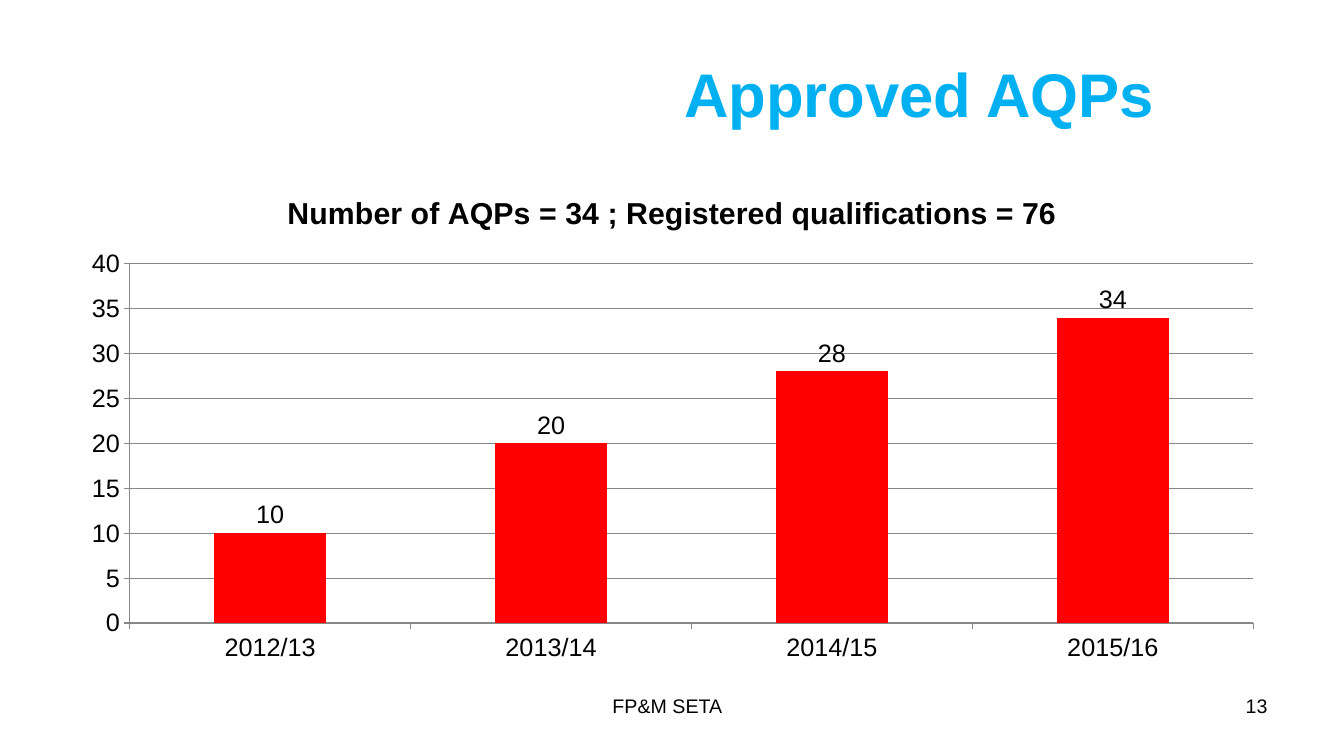
from pptx import Presentation
from pptx.chart.data import CategoryChartData
from pptx.dml.color import RGBColor
from pptx.enum.chart import XL_CHART_TYPE, XL_LABEL_POSITION, XL_TICK_MARK
from pptx.enum.text import MSO_ANCHOR, PP_ALIGN
from pptx.util import Inches, Pt

FONT = "Arial"
BLACK = "000000"
GRID_GREY = "878787"


def rgb(color):
    """Turn a hex string into a colour."""
    return RGBColor.from_string(color)


def set_font(font, size, color=BLACK, bold=False):
    """Apply the slide's typeface with a size, colour and weight."""
    font.name = FONT
    font.size = Pt(size)
    font.bold = bold
    font.color.rgb = rgb(color)


def add_text(slide, text, box, align, size, color=BLACK, bold=False, anchor=MSO_ANCHOR.TOP):
    """Add a one-paragraph text box."""
    shape = slide.shapes.add_textbox(*map(Inches, box))
    frame = shape.text_frame
    frame.word_wrap = True
    frame.vertical_anchor = anchor
    paragraph = frame.paragraphs[0]
    paragraph.text = text
    paragraph.alignment = align
    set_font(paragraph.font, size, color, bold)


def style_axis(axis):
    """Give an axis a thin grey line with outward ticks."""
    axis.major_tick_mark = XL_TICK_MARK.OUTSIDE
    axis.minor_tick_mark = XL_TICK_MARK.NONE
    axis.format.line.color.rgb = rgb(GRID_GREY)
    axis.format.line.width = Pt(0.75)
    set_font(axis.tick_labels.font, 18)


def add_column_chart(slide, title, categories, values, box, color):
    """Add a titled column chart with value labels above the columns."""
    data = CategoryChartData()
    data.categories = categories
    data.add_series("Series 1", values)
    chart = slide.shapes.add_chart(
        XL_CHART_TYPE.COLUMN_CLUSTERED, *map(Inches, box), data
    ).chart
    set_font(chart.font, 18)
    chart.has_legend = False
    chart.has_title = True
    title_paragraph = chart.chart_title.text_frame.paragraphs[0]
    title_paragraph.text = title
    set_font(title_paragraph.font, 21.6, bold=True)
    chart.chart_title.include_in_layout = False

    style_axis(chart.category_axis)
    value_axis = chart.value_axis
    style_axis(value_axis)
    value_axis.minimum_scale = 0
    value_axis.maximum_scale = 40
    value_axis.major_unit = 5
    value_axis.has_major_gridlines = True
    gridline = value_axis.major_gridlines.format.line
    gridline.color.rgb = rgb(GRID_GREY)
    gridline.width = Pt(0.75)

    plot = chart.plots[0]
    plot.gap_width = 150
    plot.vary_by_categories = False
    plot.has_data_labels = True
    labels = plot.data_labels
    labels.show_value = True
    labels.position = XL_LABEL_POSITION.OUTSIDE_END
    set_font(labels.font, 18)
    fill = plot.series[0].format.fill
    fill.solid()
    fill.fore_color.rgb = rgb(color)


def main():
    """Build the slide on approved AQPs."""
    presentation = Presentation()
    presentation.slide_width = Inches(13.33)
    presentation.slide_height = Inches(7.5)
    slide = presentation.slides.add_slide(presentation.slide_layouts[6])
    add_text(slide, "Approved AQPs", (5.57, 0.3, 7.1, 1.25), PP_ALIGN.CENTER,
             44, "00B0F0", True, MSO_ANCHOR.MIDDLE)
    add_text(slide, "FP&M SETA", (4.51, 6.83, 4.22, 0.52), PP_ALIGN.CENTER, 14)
    add_text(slide, "13", (9.56, 6.83, 3.11, 0.52), PP_ALIGN.RIGHT, 14)
    add_column_chart(
        slide,
        "Number of AQPs = 34 ; Registered qualifications = 76",
        ["2012/13", "2013/14", "2014/15", "2015/16"],
        [10, 20, 28, 34],
        (0.67, 1.71, 12, 4.95),
        "FF0000",
    )
    presentation.save("out.pptx")


if __name__ == "__main__":
    main()
